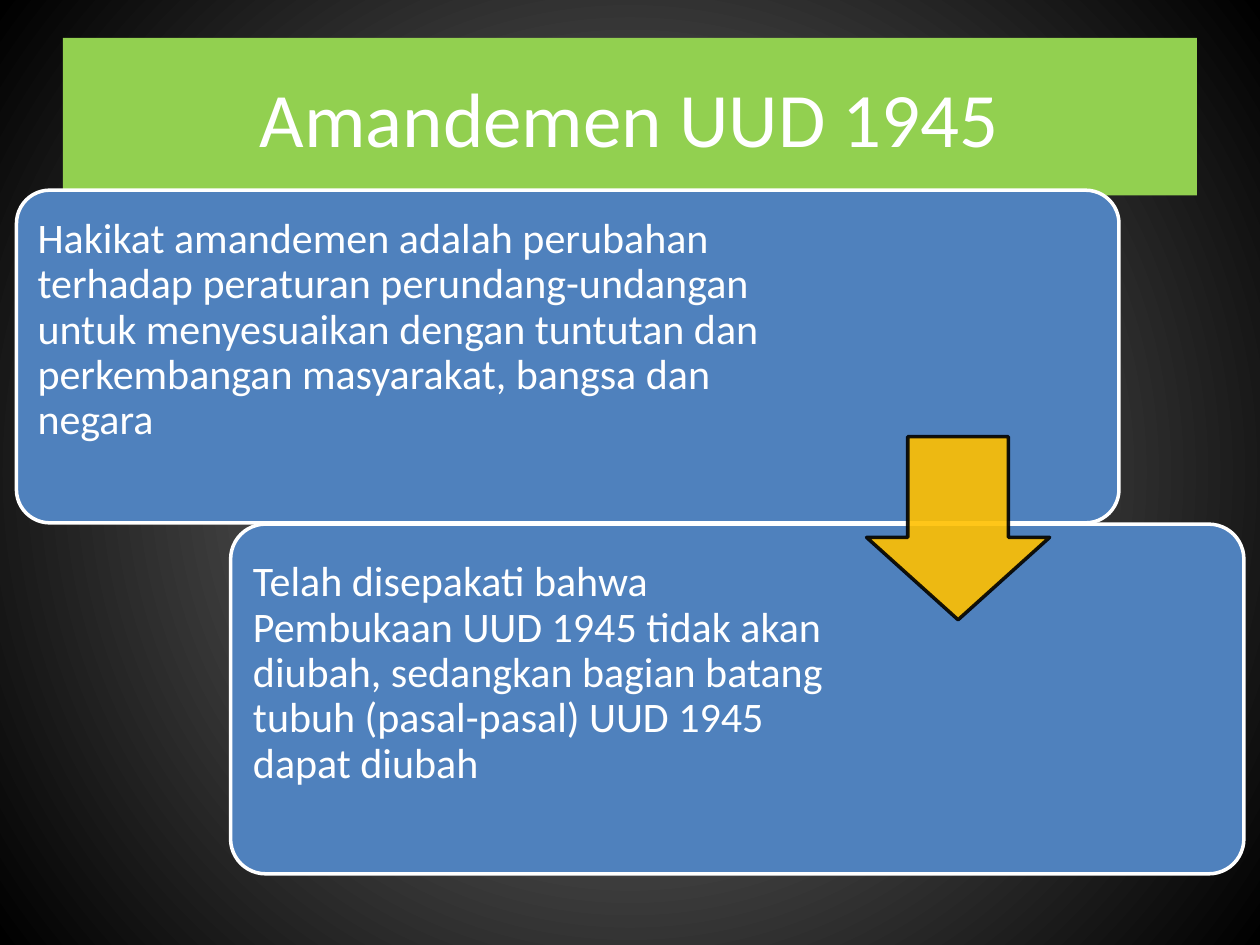
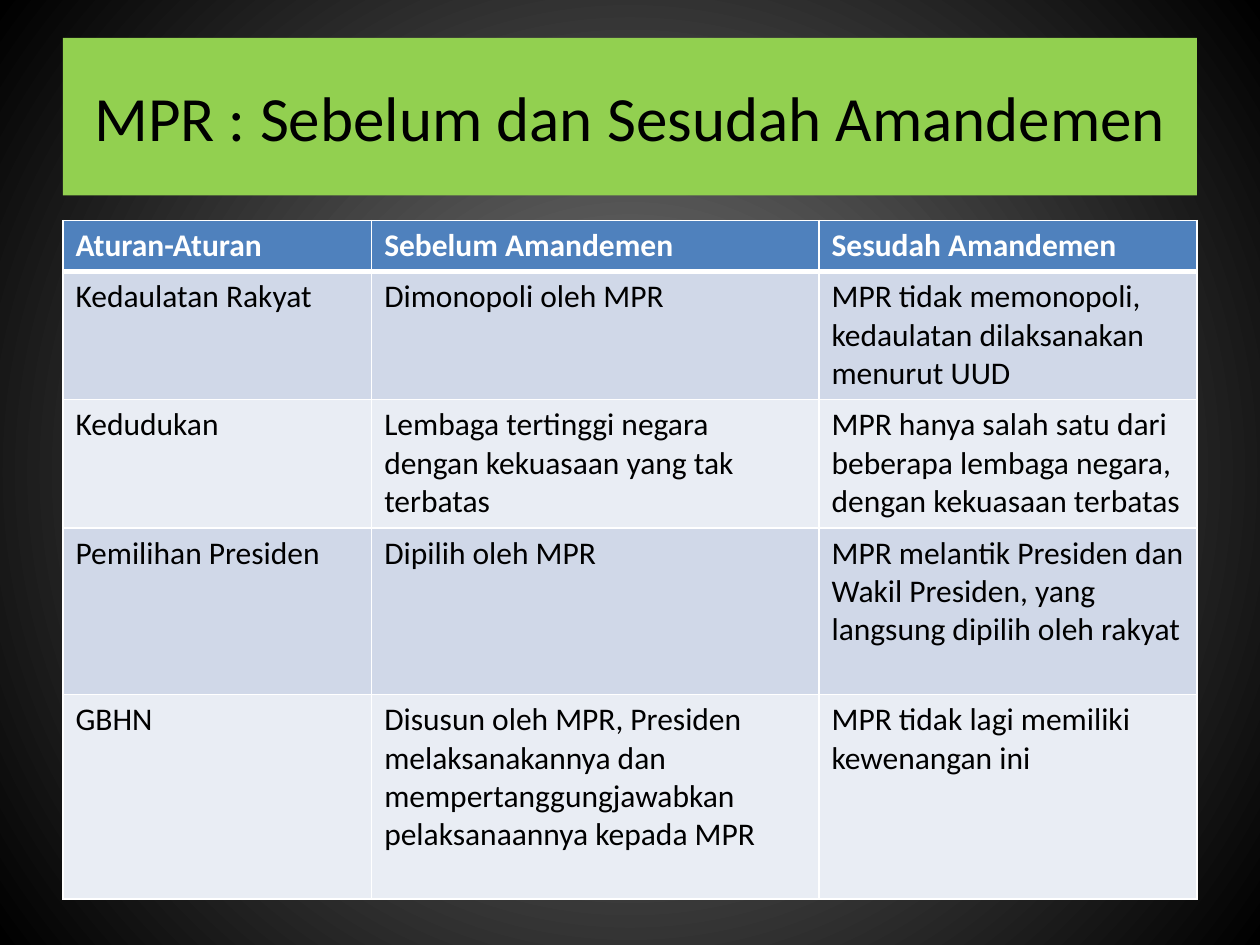
from lxml import etree
from pptx import Presentation
from pptx.dml.color import RGBColor
from pptx.enum.shapes import MSO_SHAPE as Shape
from pptx.enum.text import MSO_ANCHOR as Anchor, PP_ALIGN as Align
from pptx.oxml.ns import qn
from pptx.util import Pt

COLORS = {
    "white": "FFFFFF", "black": "000000", "glow": "7F7F7F",
    "title_band": "92D050", "blue": "4F81BD", "arrow": "FFC000",
    "odd_row": "D0D8E8", "even_row": "E9EDF4",
}
FONT = "Calibri"
MARGIN, CONTENT_WIDTH = 36, 648

# Left, top, width, height of each panel and of the text in it
PANELS = [
    ((9.4, 108.7, 630, 190.1), (14.4, 114.5, 440, 178.6),
     "Hakikat amandemen adalah perubahan terhadap peraturan perundang-undangan "
     "untuk menyesuaikan dengan tuntutan dan perkembangan masyarakat, bangsa dan negara"),
    ((131.8, 299.5, 579, 199.8), (137.5, 306, 355.7, 188),
     "Telah disepakati bahwa Pembukaan UUD 1945 tidak akan diubah, sedangkan "
     "bagian batang tubuh (pasal-pasal) UUD 1945 dapat diubah"),
]

RULES = [
    ("Aturan-Aturan", "Sebelum Amandemen", "Sesudah Amandemen"),
    ("Kedaulatan Rakyat", "Dimonopoli oleh MPR",
     "MPR tidak memonopoli, kedaulatan dilaksanakan menurut UUD"),
    ("Kedudukan", "Lembaga tertinggi negara dengan kekuasaan yang tak terbatas",
     "MPR hanya salah satu dari beberapa lembaga negara, dengan kekuasaan terbatas"),
    ("Pemilihan Presiden", "Dipilih oleh MPR",
     "MPR melantik Presiden dan Wakil Presiden, yang langsung dipilih oleh rakyat"),
    ("GBHN",
     "Disusun oleh MPR, Presiden melaksanakannya dan mempertanggungjawabkan "
     "pelaksanaannya kepada MPR",
     "MPR tidak lagi memiliki kewenangan ini"),
]
COLUMN_WIDTHS = (176.4, 255.6, 216)
ROW_HEIGHTS = (29.2, 73.2, 73.2, 95.2, 117)


def rgb(name):
    return RGBColor.from_string(COLORS[name])


def write(frame, text, size, color, bold=False):
    frame.text = text
    paragraph = frame.paragraphs[0]
    font = paragraph.runs[0].font
    font.name, font.size, font.bold = FONT, Pt(size), bold
    font.color.rgb = rgb(color)
    return paragraph


def add_box(slide, kind, bounds, fill, line=None):
    box = slide.shapes.add_shape(kind, *map(Pt, bounds))
    box.shadow.inherit = False
    box.fill.solid()
    box.fill.fore_color.rgb = rgb(fill)
    if line:
        box.line.color.rgb = rgb(line)
        box.line.width = Pt(2)
    else:
        box.line.fill.background()
    return box


def add_glow_background(slide):
    fill = slide.background.fill
    fill.gradient()
    for stop, color, position in zip(fill.gradient_stops, ("glow", "black"), (0, 1)):
        stop.color.rgb = rgb(color)
        stop.position = position
    # Radiate from the middle of the slide
    linear = next(slide.background._cSld.iter(qn("a:lin")))
    radial = etree.Element(qn("a:path"), path="circle")
    etree.SubElement(radial, qn("a:fillToRect"),
                     {side: "50000" for side in "ltrb"})
    linear.getparent().replace(linear, radial)


def add_titled_slide(deck, title, size, color):
    slide = deck.slides.add_slide(deck.slide_layouts[6])
    add_glow_background(slide)
    band = add_box(slide, Shape.RECTANGLE, (MARGIN, 21.6, CONTENT_WIDTH, 90), "title_band")
    band.text_frame.word_wrap = True
    band.text_frame.vertical_anchor = Anchor.MIDDLE
    write(band.text_frame, title, size, color).alignment = Align.CENTER
    return slide


def add_panel(slide, bounds, text_bounds, text):
    panel = add_box(slide, Shape.ROUNDED_RECTANGLE, bounds, "blue", "white")
    panel.adjustments[0] = 0.1
    frame = slide.shapes.add_textbox(*map(Pt, text_bounds)).text_frame
    frame.word_wrap = True
    frame.vertical_anchor = Anchor.MIDDLE
    frame.margin_left = frame.margin_right = frame.margin_top = Pt(7.2)
    frame.margin_bottom = Pt(37)
    write(frame, text, 24, "white").line_spacing = 0.9


def add_down_arrow(slide, bounds):
    arrow = add_box(slide, Shape.DOWN_ARROW, bounds, "arrow", "black")
    arrow.adjustments[0], arrow.adjustments[1] = 0.55, 0.45
    # Fill and outline are both 90% opaque
    for color in arrow._element.spPr.iter(qn("a:srgbClr")):
        etree.SubElement(color, qn("a:alpha"), val="90000")


def set_borders(cell, widths):
    properties = cell._tc.get_or_add_tcPr()
    for side in "LRTB":
        line = etree.SubElement(properties, qn(f"a:ln{side}"), w=str(Pt(widths.get(side, 1))))
        solid = etree.SubElement(line, qn("a:solidFill"))
        etree.SubElement(solid, qn("a:srgbClr"), val=COLORS["white"])


def add_rules_table(slide):
    table = slide.shapes.add_table(
        len(RULES), len(COLUMN_WIDTHS), Pt(MARGIN), Pt(126),
        Pt(CONTENT_WIDTH), Pt(sum(ROW_HEIGHTS))).table
    for column, width in zip(table.columns, COLUMN_WIDTHS):
        column.width = Pt(width)
    for index, (row, height, texts) in enumerate(zip(table.rows, ROW_HEIGHTS, RULES)):
        row.height = Pt(height)
        header = index == 0
        fill = "blue" if header else "odd_row" if index % 2 else "even_row"
        thick = {0: {"B": 3}, 1: {"T": 3}}.get(index, {})
        for cell, text in zip(row.cells, texts):
            set_borders(cell, thick)
            cell.fill.solid()
            cell.fill.fore_color.rgb = rgb(fill)
            write(cell.text_frame, text, 18, "white" if header else "black", header)


def main():
    deck = Presentation()
    deck.slide_width, deck.slide_height = Pt(720), Pt(540)

    # Essence of the amendment
    amendment = add_titled_slide(deck, "Amandemen UUD 1945", 44, "white")
    for panel in PANELS:
        add_panel(amendment, *panel)
    add_down_arrow(amendment, (495.2, 249.6, 104.6, 104.6))

    # MPR before and after
    comparison = add_titled_slide(deck, "MPR : Sebelum dan Sesudah Amandemen", 36, "black")
    add_rules_table(comparison)

    deck.save("out.pptx")


if __name__ == "__main__":
    main()
